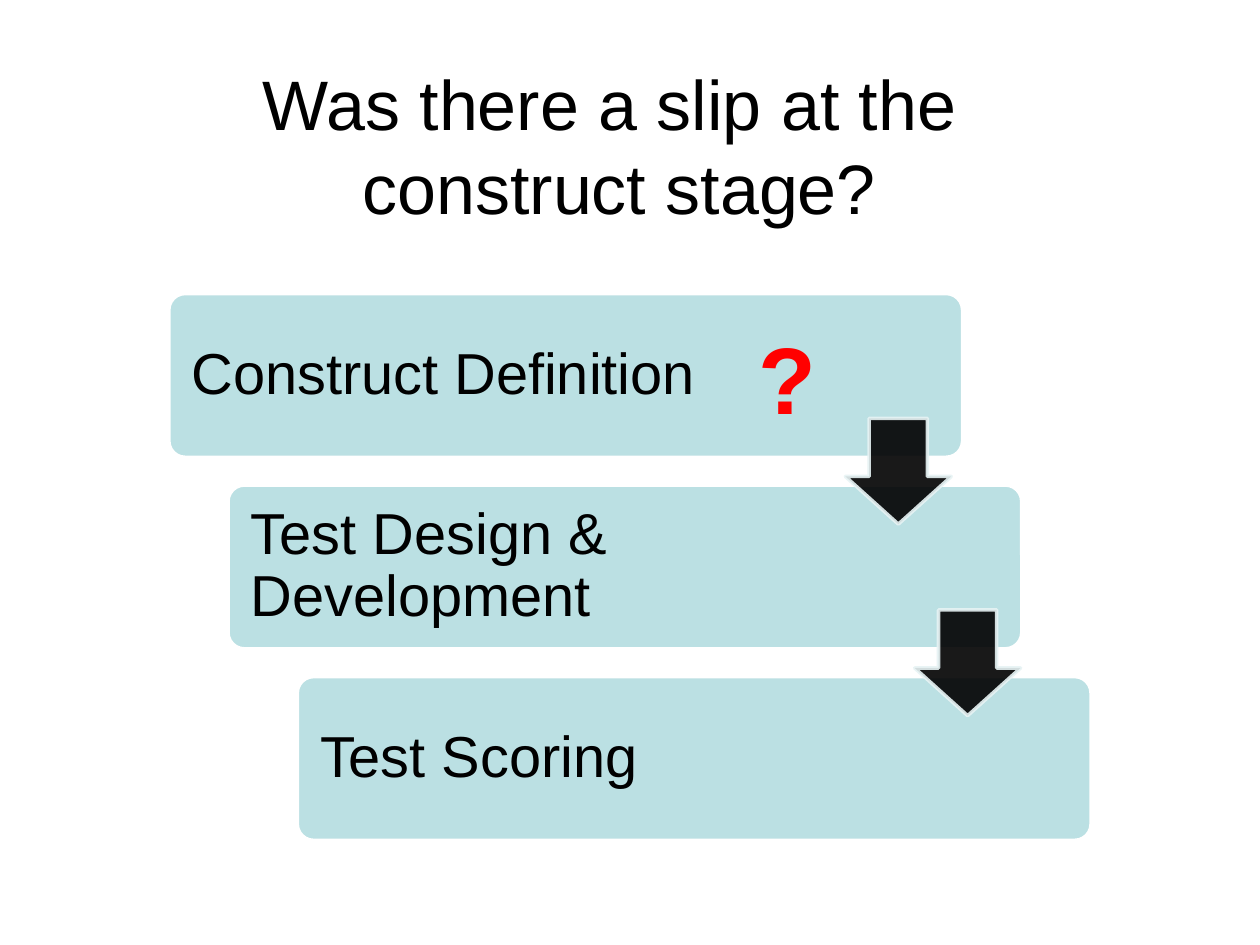
from lxml import etree
from pptx import Presentation
from pptx.dml.color import RGBColor
from pptx.enum.shapes import MSO_SHAPE
from pptx.enum.text import MSO_ANCHOR, MSO_AUTO_SIZE, PP_ALIGN
from pptx.oxml.ns import qn
from pptx.util import Inches, Pt

ROUND_RECT, DOWN_ARROW = MSO_SHAPE.ROUNDED_RECTANGLE, MSO_SHAPE.DOWN_ARROW
MIDDLE, TOP = MSO_ANCHOR.MIDDLE, MSO_ANCHOR.TOP
LEFT, CENTER = PP_ALIGN.LEFT, PP_ALIGN.CENTER
FIT_SHAPE = MSO_AUTO_SIZE.SHAPE_TO_FIT_TEXT

COLORS = {
    "text": "000000",
    "box": "BBE0E3",
    "box_line": "FFFFFF",
    "arrow": "000000",
    "arrow_line": "E7F3F4",
    "question": "FF0000",
}
STAGES = [
    ("Construct Definition", 1.34, 4.9),
    ("Test Design & Development", 1.81, 4.83),
    ("Test Scoring", 2.36, 4.83),
]
STAGE_TOP, STAGE_STEP = 2.33, 1.52
STAGE_WIDTH, STAGE_HEIGHT = 6.3, 1.3
LABEL_OFFSET = 0.04
ARROW_SIZE, ARROW_DX, ARROW_DY = 0.84, 4.9, -0.53


def color(name):
    return RGBColor.from_string(COLORS[name])


def set_opacity(fill, percent):
    for clr in fill._xPr.iter(qn("a:srgbClr")):
        etree.SubElement(clr, qn("a:alpha")).set("val", str(percent * 1000))


def add_text(s, text, box, size, name="text", align=LEFT, anchor=MIDDLE, bold=False):
    tb = s.shapes.add_textbox(*map(Inches, box))
    tf = tb.text_frame
    tf.word_wrap = True
    tf.vertical_anchor = anchor
    p = tf.paragraphs[0]
    p.text = text
    p.alignment = align
    p.font.name = "Arial"
    p.font.size = Pt(size)
    p.font.bold = bold
    p.font.color.rgb = color(name)
    return tf


def add_block(s, kind, box, adjustments, name):
    sp = s.shapes.add_shape(kind, *map(Inches, box))
    sp.shadow.inherit = False
    for i, value in enumerate(adjustments):
        sp.adjustments[i] = value
    sp.fill.solid()
    sp.fill.fore_color.rgb = color(name)
    sp.line.color.rgb = color(name + "_line")
    sp.line.width = Pt(2)
    return sp


def add_stage(s, text, left, top, label_width):
    add_block(s, ROUND_RECT, (left, top, STAGE_WIDTH, STAGE_HEIGHT), [0.1], "box")
    label_box = (left + LABEL_OFFSET, top + LABEL_OFFSET,
                 label_width, STAGE_HEIGHT - 2 * LABEL_OFFSET)
    tf = add_text(s, text, label_box, 33)
    tf.margin_left = tf.margin_right = tf.margin_top = tf.margin_bottom = Inches(0.14)
    tf.paragraphs[0].line_spacing = 0.9


def add_arrow(s, left, top):
    sp = add_block(s, DOWN_ARROW, (left, top, ARROW_SIZE, ARROW_SIZE), [0.55, 0.45], "arrow")
    set_opacity(sp.fill, 90)


def main():
    """Build the slide of three test stages joined by arrows."""
    prs = Presentation()
    prs.slide_width, prs.slide_height = Inches(10), Inches(7.5)
    s = prs.slides.add_slide(prs.slide_layouts[6])
    add_text(s, "Was there a slip at the \vconstruct stage?", (0.25, 0.3, 9.33, 1.7), 40,
             align=CENTER)
    tops = [STAGE_TOP + i * STAGE_STEP for i in range(len(STAGES))]
    for (text, left, label_width), top in zip(STAGES, tops):
        add_stage(s, text, left, top, label_width)
    for (_, left, _), top in zip(STAGES[1:], tops[1:]):
        add_arrow(s, left + ARROW_DX, top + ARROW_DY)
    tf = add_text(s, "?", (5.92, 2.49, 0.66, 1.01), 54, "question", CENTER, TOP, True)
    tf.word_wrap = False
    tf.auto_size = FIT_SHAPE
    prs.save("out.pptx")


if __name__ == "__main__":
    main()
